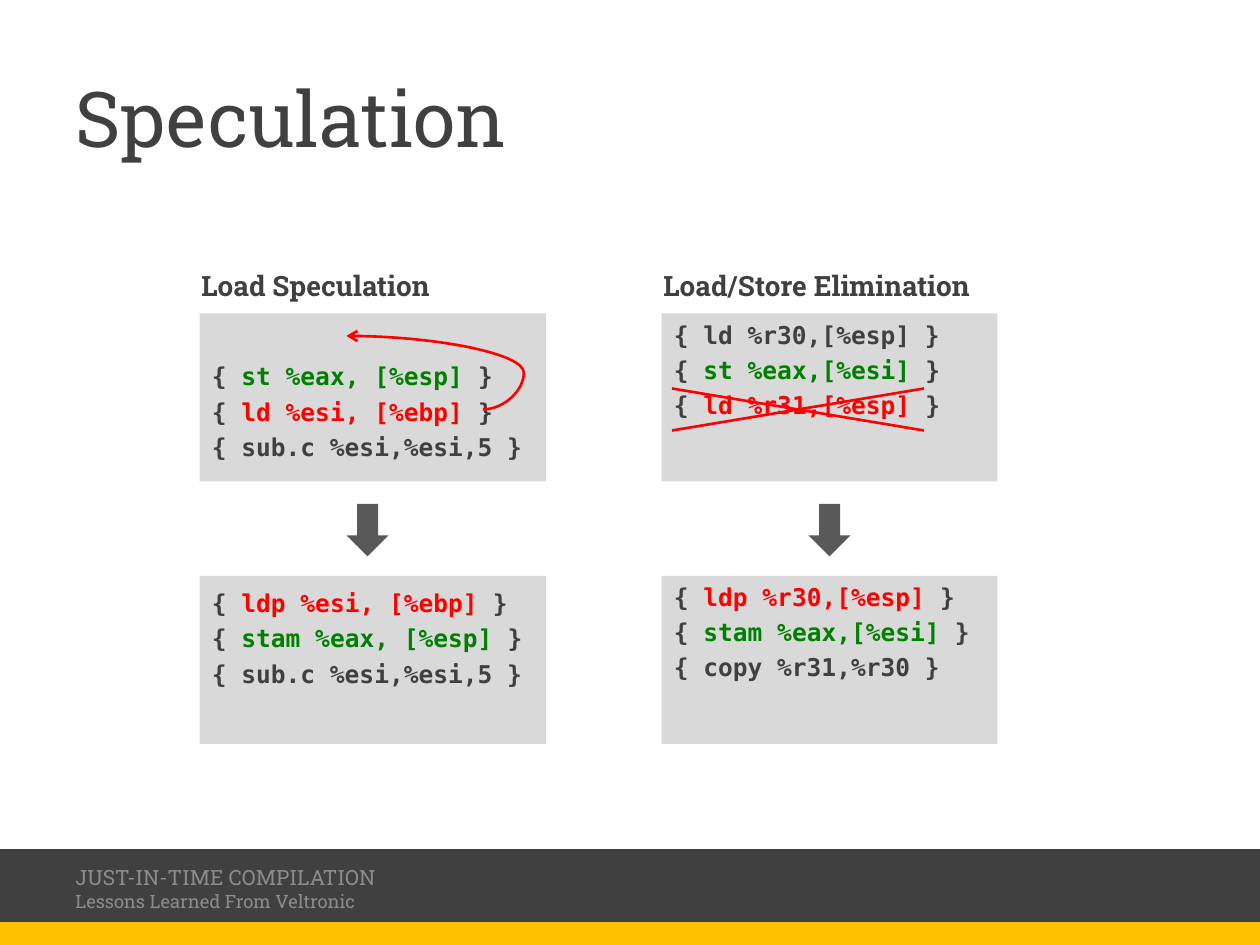
from pptx import Presentation
from pptx.util import Inches, Pt
from pptx.dml.color import RGBColor
from pptx.enum.shapes import MSO_SHAPE as Kind, MSO_CONNECTOR as Wire
from pptx.enum.text import MSO_ANCHOR as Anchor, PP_ALIGN as Align
from lxml.etree import SubElement as Sub
from pptx.oxml.ns import qn

DARK, GOLD, GREY = "404040", "FFC000", "D9D9D9"
RED, GREEN, STEEL, DIM = "FF0000", "008000", "595959", "8C8C8C"
SLAB, MONO = "Roboto Slab", "DejaVu Sans Mono"
COLS, ROWS = 120, 90


def hue(code):
    return RGBColor.from_string(code)


def apply(item, **vals):
    for key, val in vals.items():
        setattr(item, key, val)


class Deck:
    """Holds the grid and the current slide."""

    def __init__(self):
        self.prs = Presentation()
        apply(self.prs, slide_width=Inches(10), slide_height=Inches(7.5))
        self.slide = self.prs.slides.add_slide(self.prs.slide_layouts[6])
        self.col = self.prs.slide_width / COLS
        self.row = self.prs.slide_height / ROWS

    def grid(self, *spots):
        """Turn alternating columns and rows into lengths."""
        return [int(s * (self.row if i % 2 else self.col))
                for i, s in enumerate(spots)]

    def run(self, para, text, color, **font):
        run = para.add_run()
        run.text = text
        apply(run.font, **font)
        run.font.color.rgb = hue(color)

    def shape(self, kind, spot, fill, edge=None, turn=0):
        item = self.slide.shapes.add_shape(kind, *self.grid(*spot))
        item.shadow.inherit = False
        item.rotation = turn
        item.fill.solid()
        item.fill.fore_color.rgb = hue(fill)
        if edge:
            item.line.color.rgb = hue(fill)
            item.line.width = Pt(edge)
        else:
            item.line.fill.background()
        return item

    def label(self, spot, lines, color, anchor=Anchor.TOP, wrap=True, bold=False):
        """Lines are pairs of text and size."""
        frame = self.slide.shapes.add_textbox(*self.grid(*spot)).text_frame
        apply(frame, word_wrap=wrap, vertical_anchor=anchor)
        for i, (text, size) in enumerate(lines):
            para = frame.add_paragraph() if i else frame.paragraphs[0]
            self.run(para, text, color, name=SLAB, size=Pt(size), bold=bold)

    def code(self, spot, lines, gap, pitch, lead=0):
        """Lines are pairs of instruction and colour; lead is rows left free."""
        frame = self.shape(Kind.RECTANGLE, spot, GREY).text_frame
        apply(frame, word_wrap=True, vertical_anchor=Anchor.TOP,
              margin_top=Inches(0.05) + int(lead * self.row))
        font = dict(name=MONO, size=Pt(14), bold=True)
        for i, (text, color) in enumerate(lines):
            para = frame.add_paragraph() if i else frame.paragraphs[0]
            apply(para, alignment=Align.LEFT, line_spacing=pitch,
                  space_before=Pt(gap if i else 3.3))
            for part, tint in (("{ ", DARK), (text, color), (" }", DARK)):
                self.run(para, part, tint, **font)

    def wire(self, kind, spot, bend=None, head=False):
        item = self.slide.shapes.add_connector(kind, *self.grid(*spot))
        item.line.color.rgb = hue(RED)
        item.line.width = Pt(1.5)
        props = item._element.spPr
        if bend is not None:
            shape = props.find(qn("a:prstGeom"))
            vals = shape.find(qn("a:avLst"))
            if vals is None:
                vals = Sub(shape, qn("a:avLst"))
            Sub(vals, qn("a:gd"), name="adj1", fmla=f"val {int(bend * 100000)}")
        if head:
            Sub(props.find(qn("a:ln")), qn("a:tailEnd"), type="arrow")
        Sub(props, qn("a:effectLst"))


def main():
    deck = Deck()

    # Footer bars, title and footer text
    deck.shape(Kind.RECTANGLE, (0, 81, COLS, 9), DARK, 2)
    deck.shape(Kind.RECTANGLE, (0, 88, COLS, 2), GOLD, 2)
    deck.label((6, 3.6, 108, 15), [("Speculation", 44)], DARK, Anchor.MIDDLE)
    deck.label((6, 82.2, 73, 4.8),
               [("JUST-IN-TIME COMPILATION", 12),
                ("Lessons Learned From Veltronic", 10.5)], DIM, Anchor.MIDDLE)

    # Two columns: heading, code before, arrow, code after
    sub = ("sub.c %esi,%esi,5", DARK)
    columns = [
        ("Load Speculation", 19, 33, 3.4, dict(gap=0, pitch=1.2),
         [("st %eax, [%esp]", GREEN), ("ld %esi, [%ebp]", RED), sub],
         [("ldp %esi, [%ebp]", RED), ("stam %eax, [%esp]", GREEN), sub]),
        ("Load/Store Elimination", 63, 32, 0, dict(gap=3.3, pitch=1),
         [("ld %r30,[%esp]", DARK), ("st %eax,[%esi]", GREEN),
          ("ld %r31,[%esp]", RED)],
         [("ldp %r30,[%esp]", RED), ("stam %eax,[%esi]", GREEN),
          ("copy %r31,%r30", DARK)]),
    ]
    for head, left, wide, lead, style, before, after in columns:
        deck.label((left - 1, 25, wide + 2, 4.4), [(head, 16)], DARK,
                   wrap=False, bold=True)
        deck.code((left, 29.85, wide, 16), before, lead=lead, **style)
        deck.code((left, 54.85, wide, 16), after, **style)
        deck.shape(Kind.RIGHT_ARROW, (left + 13.5, 48.5, 5, 4), STEEL, turn=90)

    # Load moved up, and redundant load crossed out
    deck.wire(Wire.CURVE, (46, 39, 33, 32), bend=-0.3, head=True)
    deck.wire(Wire.STRAIGHT, (64, 41, 88, 37))
    deck.wire(Wire.STRAIGHT, (64, 37, 88, 41))

    deck.prs.save("out.pptx")


if __name__ == "__main__":
    main()
